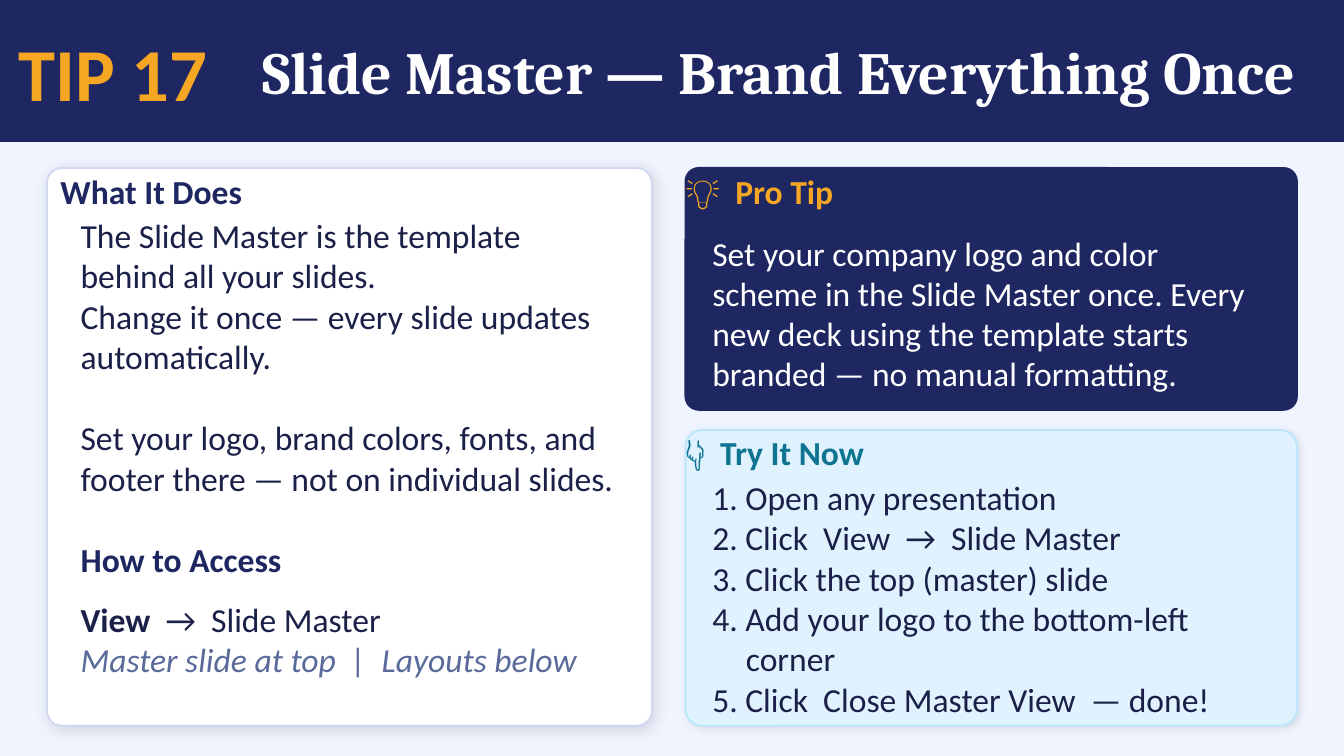
"""Build the Slide Master tip slide: a title band and three cards."""
from lxml import etree
from pptx import Presentation
from pptx.dml.color import RGBColor as RGB
from pptx.enum.shapes import MSO_SHAPE as SHAPE
from pptx.enum.text import MSO_ANCHOR as ANCHOR, PP_ALIGN as ALIGN
from pptx.oxml.ns import qn
from pptx.util import Inches, Pt

NAVY, INK, SLATE = RGB(0x1E, 0x27, 0x61), RGB(0x1A, 0x20, 0x48), RGB(0x5A, 0x6A, 0x9A)
AMBER, TEAL, WHITE = RGB(0xF5, 0xA6, 0x23), RGB(0x0E, 0x74, 0x90), RGB(255, 255, 255)
PAPER, EDGE = RGB(0xF0, 0xF4, 0xFF), RGB(0xD0, 0xD8, 0xF0)
SKY, SKY_EDGE = RGB(0xE0, 0xF2, 0xFE), RGB(0xBA, 0xE6, 0xFD)

W, BAND = 10, 1.05
H = W * 9 / 16
LEFT, RIGHT, TOP, BOTTOM = 0.35, 5.1, 1.25, 5.4
LEFT_W, RIGHT_W, TIP_H, GAP = 4.5, 4.55, 1.8, 0.15
TRY_TOP = TOP + TIP_H + GAP
INSET, HEAD_H, LINE = 0.2, 0.35, 22
BODY_L, BODY_R, BODY_W = LEFT + 0.25, RIGHT + INSET, 4.1

BODY = {"size": Pt(18), "name": "Calibri", "bold": False}
HEAD = {**BODY, "bold": True}
TIP = {**HEAD, "size": Pt(40)}
TITLE = {**HEAD, "size": Pt(32), "name": "Cambria"}

CARDS = [
    ((LEFT, TOP, LEFT_W, BOTTOM - TOP), 0.11, WHITE, EDGE, (13, 8, 2)),
    ((RIGHT, TOP, RIGHT_W, TIP_H), 0.1, NAVY, NAVY, None),
    ((RIGHT, TRY_TOP, RIGHT_W, BOTTOM - TRY_TOP), 0.125, SKY, SKY_EDGE, (10, 4, 1)),
]
HEADINGS = [
    ((1.95, 0.3, 7.96, 0.45), "Slide Master — Brand Everything Once", TITLE, WHITE),
    ((LEFT + 0.1, TOP, 4, HEAD_H), "What It Does", HEAD, NAVY),
    ((BODY_L, 4, 4, 0.32), "How to Access", HEAD, NAVY),
    ((RIGHT, TOP, BODY_W, HEAD_H), "💡  Pro Tip", HEAD, AMBER),
    ((RIGHT, TRY_TOP, 3.8, 0.33), "👇  Try It Now", HEAD, TEAL),
]
ABOUT = [
    "The Slide Master is the template behind all your slides.",
    "Change it once — every slide updates automatically.",
    "Set your logo, brand colors, fonts, and footer there — not on individual slides.",
]
ACCESS = [
    ("View", HEAD, INK),
    ("  →  Slide Master", BODY, INK),
    None,
    ("Master slide at top  |  Layouts below", {**BODY, "italic": True}, SLATE),
]
PRO_TIP = ("Set your company logo and color scheme in the Slide Master once. "
           "Every new deck using the template starts branded — no manual formatting.")
STEPS = [
    "Open any presentation",
    "Click  View  →  Slide Master",
    "Click the top (master) slide",
    "Add your logo to the bottom-left corner",
    "Click  Close Master View  — done!",
]


def add_box(slide, place, kind, fill, line):
    sp = slide.shapes.add_shape(kind, *map(Inches, place))
    sp.shadow.inherit = False
    sp.fill.solid()
    sp.fill.fore_color.rgb = fill
    sp.line.color.rgb = line
    sp.line.width = Pt(1)
    return sp


def add_shadow(sp, alpha, blur, dist):
    effects = sp._element.spPr.find(qn("a:effectLst"))
    shadow = etree.SubElement(effects, qn("a:outerShdw"), blurRad=str(Pt(blur)),
                              dist=str(Pt(dist)), dir=str(45 * 60000), rotWithShape="0")
    color = etree.SubElement(shadow, qn("a:srgbClr"), val="000000")
    etree.SubElement(color, qn("a:alpha"), val=str(alpha * 1000))


def add_text(slide, place, paragraphs, anchor=ANCHOR.MIDDLE):
    tf = slide.shapes.add_textbox(*map(Inches, place)).text_frame
    tf.word_wrap, tf.vertical_anchor = True, anchor
    for side in ("left", "top", "right", "bottom"):
        setattr(tf, f"margin_{side}", 0)
    for i, runs in enumerate(paragraphs):
        p = tf.add_paragraph() if i else tf.paragraphs[0]
        for run in runs:
            if run is None:
                p.add_line_break()
                continue
            text, style, color = run
            r = p.add_run()
            r.text = text
            for key, value in style.items():
                setattr(r.font, key, value)
            r.font.color.rgb = color
    return tf


def main():
    prs = Presentation()
    prs.slide_width, prs.slide_height = Inches(W), Inches(H)
    s = prs.slides.add_slide(prs.slide_layouts[6])
    s.background.fill.solid()
    s.background.fill.fore_color.rgb = PAPER

    add_box(s, (0, 0, W, BAND), SHAPE.RECTANGLE, NAVY, NAVY)
    for place, radius, fill, line, shadow in CARDS:
        card = add_box(s, place, SHAPE.ROUNDED_RECTANGLE, fill, line)
        card.adjustments[0] = radius / min(place[2:])
        if shadow:
            add_shadow(card, *shadow)

    tip = add_text(s, (0.09, 0.34, 1.5, 0.38), [[("TIP 17", TIP, AMBER)]])
    tip.paragraphs[0].alignment = ALIGN.CENTER
    for place, *run in HEADINGS:
        add_text(s, place, [[run]])

    about = add_text(s, (BODY_L, TOP + HEAD_H, 4, 2.18),
                     [[(text, BODY, INK)] for text in ABOUT], ANCHOR.TOP)
    about.paragraphs[-1].space_before = Pt(LINE)
    add_text(s, (BODY_L, 4.38, 4, 0.75), [ACCESS])
    add_text(s, (BODY_R, 1.73, BODY_W, 1.2), [[(PRO_TIP, BODY, WHITE)]])
    steps = add_text(s, (BODY_R, TRY_TOP + 0.33, BODY_W, 1.84),
                     [[(f"{n}. {step}", BODY, INK)] for n, step in enumerate(STEPS, 1)])
    for p in steps.paragraphs:
        pPr = p._p.get_or_add_pPr()
        pPr.set("marL", str(Inches(0.25)))
        pPr.set("indent", str(-Inches(0.25)))

    prs.save("out.pptx")


if __name__ == "__main__":
    main()
